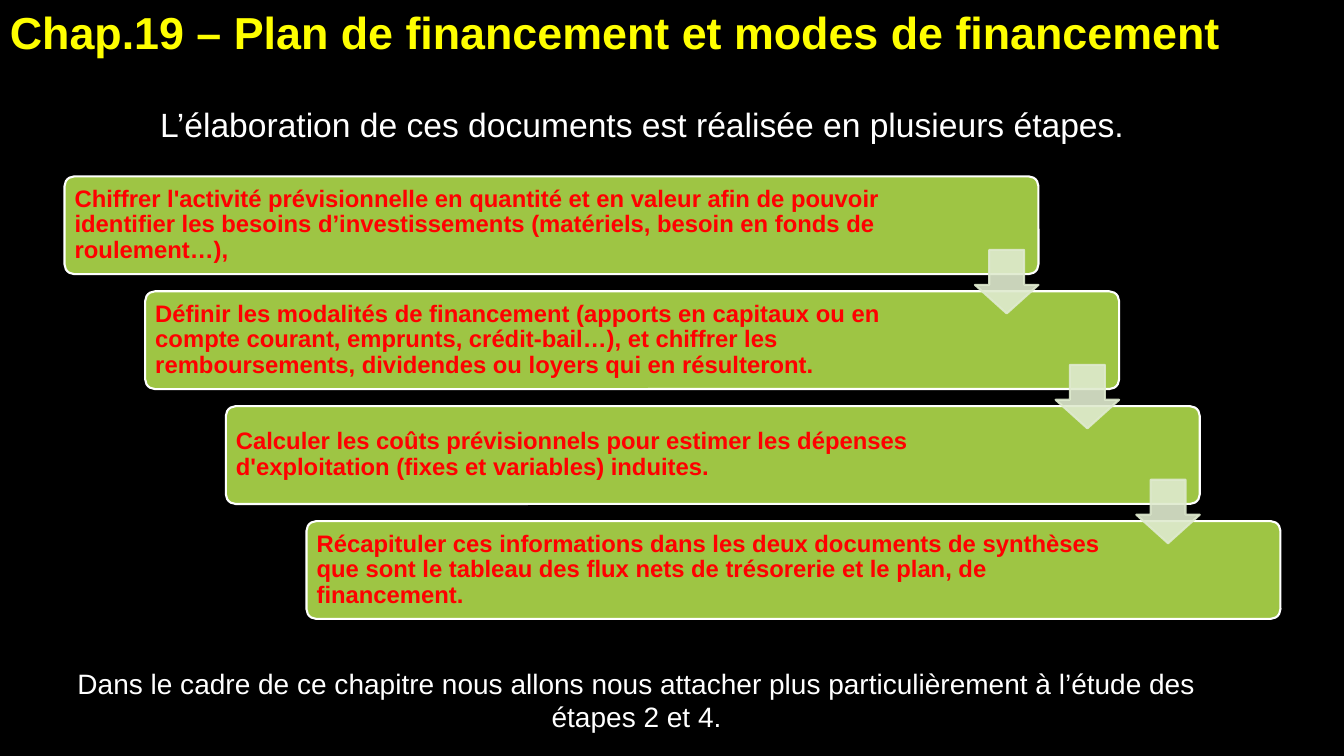
"""Build the slide showing the four cascading steps of a financing plan."""
import pptx
import pptx.dml.color
import pptx.enum.shapes
import pptx.enum.text
import pptx.oxml.ns
import pptx.util
from lxml import etree
from pptx.util import Inches

SHAPES = pptx.enum.shapes.MSO_SHAPE
ALIGN = pptx.enum.text.PP_ALIGN
FIT = pptx.enum.text.MSO_AUTO_SIZE


def paint(fill, color, opacity=100):
    fill.solid()
    fill.fore_color.rgb = pptx.dml.color.RGBColor.from_string(color)
    if opacity < 100:
        color_node = fill._xPr.find(".//" + pptx.oxml.ns.qn("a:srgbClr"))
        alpha = etree.SubElement(color_node, pptx.oxml.ns.qn("a:alpha"))
        alpha.set("val", str(opacity * 1000))


def write(left, top, width, height, text, size, color, bold=False, align=ALIGN.LEFT):
    box = slide.shapes.add_textbox(Inches(left), Inches(top), Inches(width), Inches(height))
    frame = box.text_frame
    frame.word_wrap = True
    paragraph = frame.paragraphs[0]
    paragraph.alignment = align
    run = paragraph.add_run()
    run.text = text
    run.font.name = "Arial"
    run.font.size = pptx.util.Pt(size)
    run.font.bold = bold
    paint(run.font.fill, color)
    return frame, paragraph


deck = pptx.Presentation()
deck.slide_width, deck.slide_height = Inches(13.33), Inches(7.5)
slide = deck.slides.add_slide(deck.slide_layouts[6])
paint(slide.background.fill, "000000")

title, title_line = write(
    0, 0, 13.06, 0.64, "Chap.19 – Plan de financement et modes de financement", 32, "FFFF00", bold=True)
title_line.space_before = title_line.space_after = pptx.util.Pt(3)

intro, intro_line = write(
    0.28, 1.03, 12.27, 0.46, "L’élaboration de ces documents est réalisée en plusieurs étapes. ",
    24, "FFFFFF", align=ALIGN.CENTER)
intro_line.line_spacing = 0.9

conclusion, conclusion_line = write(
    0.28, 6.56, 12.07, 0.77,
    "Dans le cadre de ce chapitre nous allons nous attacher plus particulièrement "
    "à l’étude des étapes 2 et 4.", 20, "FFFFFF", align=ALIGN.CENTER)
conclusion_line.space_before = pptx.util.Pt(6)

for frame in (title, intro, conclusion):
    frame.auto_size = FIT.SHAPE_TO_FIT_TEXT

steps = [
    (8.54, "Chiffrer l'activité prévisionnelle en quantité et en valeur afin de pouvoir identifier "
           "les besoins d’investissements (matériels, besoin en fonds de roulement…),"),
    (8.17, "Définir les modalités de financement (apports en capitaux ou en compte courant, emprunts, "
           "crédit-bail…), et chiffrer les remboursements, dividendes ou loyers qui en résulteront."),
    (8.17, "Calculer les coûts prévisionnels pour estimer les dépenses d'exploitation "
           "(fixes et variables) induites."),
    (8.17, "Récapituler ces informations dans les deux documents de synthèses que sont le tableau "
           "des flux nets de trésorerie et le plan, de financement."),
]
FIRST_LEFT, FIRST_TOP = 0.64, 1.75
STEP_RIGHT, STEP_DOWN = 0.8, 1.14
BAR_WIDTH, BAR_HEIGHT = 9.66, 0.97
ARROW_SIZE = 0.63

bars, arrows = [], []
for index, (text_width, text) in enumerate(steps):
    left, top = FIRST_LEFT + index * STEP_RIGHT, FIRST_TOP + index * STEP_DOWN
    bars.append((SHAPES.ROUNDED_RECTANGLE, left, top, BAR_WIDTH, BAR_HEIGHT,
                 [0.1], "9EC544", "FFFFFF", 100))
    arrows.append((SHAPES.DOWN_ARROW, left + BAR_WIDTH - ARROW_SIZE, top + 0.73,
                   ARROW_SIZE, ARROW_SIZE, [0.55, 0.45], "DFEACF", "DFEACF", 90))

for kind, left, top, width, height, adjustments, color, edge, opacity in bars + arrows[:-1]:
    shape = slide.shapes.add_shape(kind, Inches(left), Inches(top), Inches(width), Inches(height))
    shape.shadow.inherit = False
    for position, value in enumerate(adjustments):
        shape.adjustments[position] = value
    paint(shape.fill, color, opacity)
    shape.line.width = pptx.util.Pt(1.5)
    paint(shape.line.fill, edge, opacity)

for index, (text_width, text) in enumerate(steps):
    frame, paragraph = write(
        FIRST_LEFT + 0.03 + index * STEP_RIGHT, FIRST_TOP + 0.03 + index * STEP_DOWN,
        text_width, 0.91, text, 17, "FF0000", bold=True)
    frame.vertical_anchor = pptx.enum.text.MSO_ANCHOR.MIDDLE
    frame.margin_left = frame.margin_right = Inches(0.07)
    frame.margin_top = frame.margin_bottom = Inches(0.07)
    paragraph.line_spacing = 0.9

deck.save("out.pptx")
